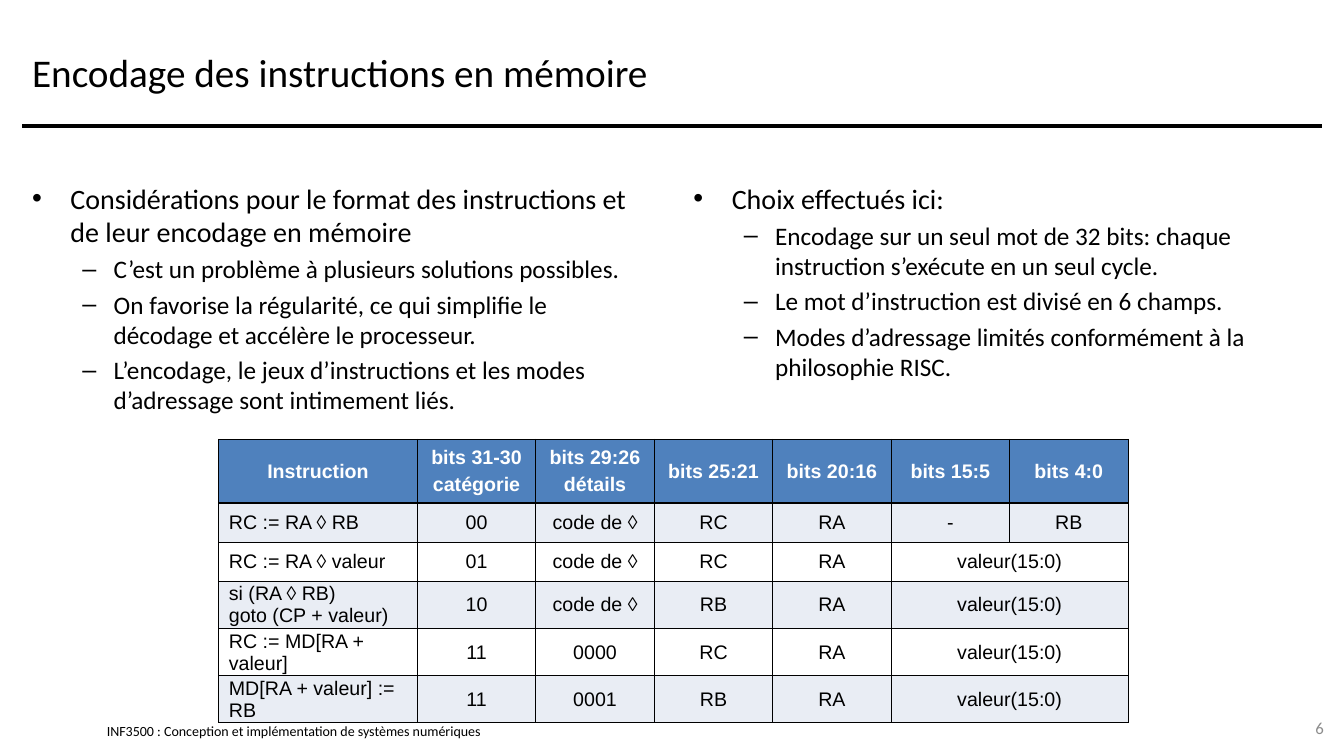
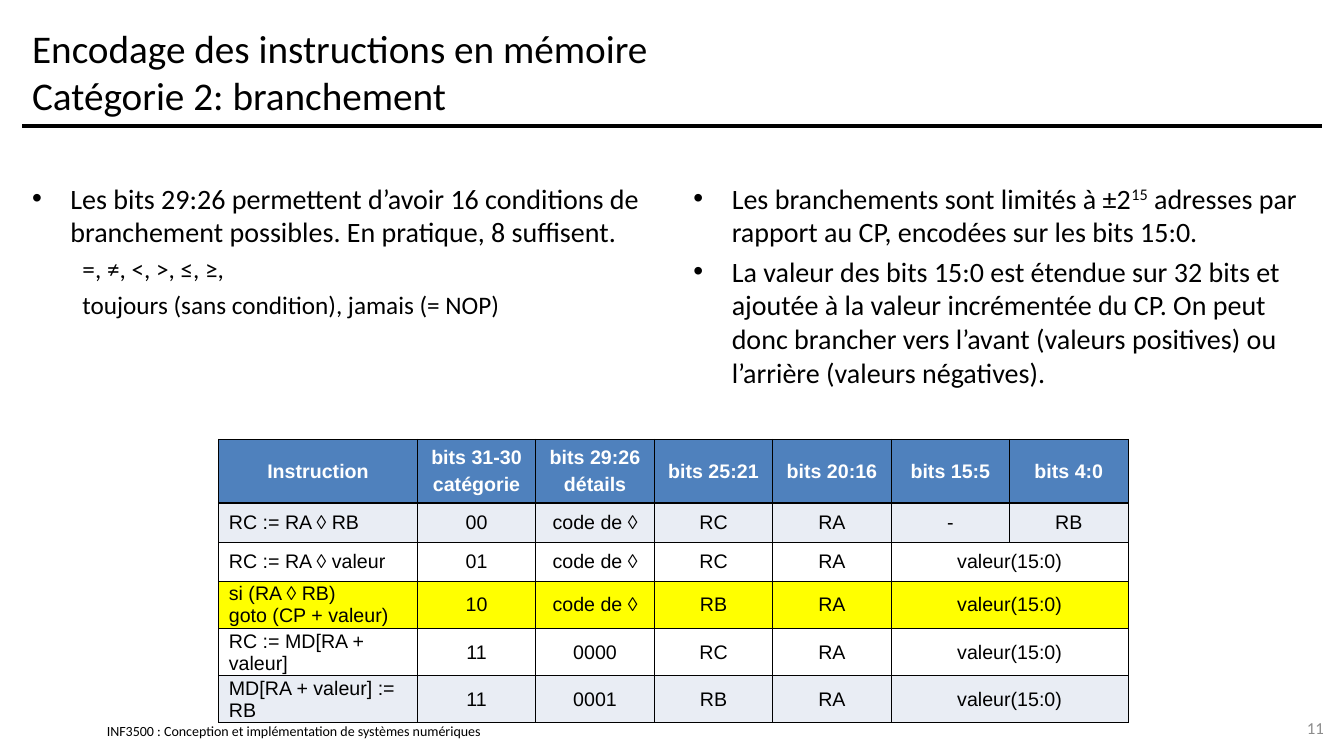
from copy import deepcopy

from lxml.etree import SubElement
from pptx import Presentation
from pptx.dml.color import RGBColor
from pptx.enum.shapes import MSO_CONNECTOR
from pptx.enum.text import MSO_ANCHOR as Anchor, PP_ALIGN as Align
from pptx.oxml.ns import qn
from pptx.util import Inches, Pt

BLACK = RGBColor(0x00, 0x00, 0x00)
WHITE = RGBColor(0xFF, 0xFF, 0xFF)
GREY = RGBColor(0x8C, 0x8C, 0x8C)
BLUE = RGBColor(0x4F, 0x81, 0xBD)
PALE = RGBColor(0xE9, 0xED, 0xF4)
YELLOW = RGBColor(0xFF, 0xFF, 0x00)

MARGIN, CONTENT_W = 0.22, 12.89
TITLE_BOX = (MARGIN, 0.17, CONTENT_W, 1.08)
RULE_Y = 1.25
COLUMN_BOXES = [(left, 1.75, 6.33, 5.08) for left in (MARGIN, 6.78)]
FOOTER_BOX = (1.06, 7.17, 5.11, 0.17)
NUMBER_BOX = (12.56, 7.02, 0.67, 0.4)
TABLE_BOX = (2.17, 4.36, 9.02, 2.64)
INSTRUCTION_W, HEADER_H, ROW_H = 1.97, 0.63, 0.39

FOOTER = "INF3500 : Conception et implémentation de systèmes numériques"
HEADER = ["Instruction", "bits 31-30|catégorie", "bits 29:26|détails",
          "bits 25:21", "bits 20:16", "bits 15:5", "bits 4:0"]
ENCODINGS = [
    ["RC := RA ◊ RB", "00", "code de ◊", "RC", "RA", "-", "RB"],
    ["RC := RA ◊ valeur", "01", "code de ◊", "RC", "RA", "valeur(15:0)"],
    ["si (RA ◊ RB)\ngoto (CP + valeur)", "10", "code de ◊", "RB", "RA", "valeur(15:0)"],
    ["RC := MD[RA + valeur]", "11", "0000", "RC", "RA", "valeur(15:0)"],
    ["MD[RA + valeur] := RB", "11", "0001", "RB", "RA", "valeur(15:0)"],
]

LEVELS = {
    "point": dict(size=20, left=0.38, hang=0.38, bullet="•"),
    "detail": dict(size=18, left=0.81, hang=0.31, bullet="–"),
    "plain": dict(size=18, left=0.5),
}

SLIDES = [
    dict(
        title="Encodage des instructions en mémoire",
        number="6",
        columns=[
            [("point", "Considérations pour le format des instructions et de leur encodage en mémoire"),
             ("detail", "C’est un problème à plusieurs solutions possibles."),
             ("detail", "On favorise la régularité, ce qui simplifie le décodage et accélère le processeur."),
             ("detail", "L’encodage, le jeux d’instructions et les modes d’adressage sont intimement liés.")],
            [("point", "Choix effectués ici:"),
             ("detail", "Encodage sur un seul mot de 32 bits: chaque instruction s’exécute en un seul cycle."),
             ("detail", "Le mot d’instruction est divisé en 6 champs."),
             ("detail", "Modes d’adressage limités conformément à la philosophie RISC.")],
        ],
    ),
    dict(
        title="Encodage des instructions en mémoire\nCatégorie 2: branchement",
        number="11",
        highlight=3,
        columns=[
            [("point", "Les bits 29:26 permettent d’avoir 16 conditions de branchement possibles. "
                       "En pratique, 8 suffisent."),
             ("plain", "=, ≠, <, >, ≤, ≥,"),
             ("plain", "toujours (sans condition), jamais (= NOP)")],
            [("point", "Les branchements sont limités à ±2^15^ adresses par rapport au CP, "
                       "encodées sur les bits 15:0."),
             ("point", "La valeur des bits 15:0 est étendue sur 32 bits et ajoutée à la valeur "
                       "incrémentée du CP. On peut donc brancher vers l’avant (valeurs positives) "
                       "ou l’arrière (valeurs négatives).")],
        ],
    ),
]


def write(frame, text, first=True, size=20, font="Calibri", color=BLACK, bold=False,
          align=Align.LEFT, before=0, after=0, left=0, hang=0, bullet=None):
    paragraph = frame.paragraphs[0] if first else frame.add_paragraph()
    properties = paragraph._p.get_or_add_pPr()
    properties.set("marL", str(Inches(left)))
    properties.set("indent", str(-Inches(hang)))
    if bullet:
        SubElement(properties, qn("a:buFont"), typeface="Arial")
        SubElement(properties, qn("a:buChar"), char=bullet)
    paragraph.alignment = align
    paragraph.space_before = Pt(0 if first else before)
    paragraph.space_after = Pt(after)
    for line_index, line in enumerate(text.split("\n")):
        if line_index:
            paragraph.add_line_break()
            paragraph._p[-1].append(deepcopy(run._r.get_or_add_rPr()))
        for part_index, part in enumerate(line.split("^")):
            run = paragraph.add_run()
            run.text = part
            run.font.size, run.font.name = Pt(size), font
            run.font.bold = bold
            run.font.color.rgb = color
            if part_index % 2:
                run._r.get_or_add_rPr().set("baseline", "30000")


def add_frame(slide, box, anchor=Anchor.MIDDLE, inset=None):
    frame = slide.shapes.add_textbox(*map(Inches, box)).text_frame
    frame.word_wrap = True
    frame.vertical_anchor = anchor
    if inset is not None:
        frame.margin_left = frame.margin_right = Inches(inset)
        frame.margin_top = frame.margin_bottom = Inches(inset)
    return frame


def add_furniture(slide, title, number):
    write(add_frame(slide, FOOTER_BOX, inset=0), FOOTER, size=10)
    rule = slide.shapes.add_connector(
        MSO_CONNECTOR.STRAIGHT,
        *map(Inches, (MARGIN, RULE_Y, MARGIN + CONTENT_W, RULE_Y)))
    rule.line.color.rgb = BLACK
    rule.line.width = Pt(3)
    SubElement(rule._element.spPr, qn("a:effectLst"))
    write(add_frame(slide, TITLE_BOX), title, size=28)
    write(add_frame(slide, NUMBER_BOX), number, size=12, color=GREY, align=Align.RIGHT)


def add_column(slide, box, points):
    frame = add_frame(slide, box, anchor=Anchor.TOP)
    for index, (level, text) in enumerate(points):
        style = LEVELS[level]
        write(frame, text, first=index == 0, before=style["size"] * 0.2, **style)


def style_cell(cell, fill):
    cell.margin_left = cell.margin_right = Inches(0.1)
    cell.margin_top = cell.margin_bottom = 0
    cell.vertical_anchor = Anchor.MIDDLE
    properties = cell._tc.get_or_add_tcPr()
    for side in ("lnL", "lnR", "lnT", "lnB"):
        border = SubElement(properties, qn(f"a:{side}"), w=str(Pt(1)))
        color = SubElement(border, qn("a:solidFill"))
        SubElement(color, qn("a:srgbClr"), val=str(BLACK))
    cell.fill.solid()
    cell.fill.fore_color.rgb = fill


def add_encoding_table(slide, box, highlight=None):
    rows = [HEADER, *ENCODINGS]
    count = len(HEADER)
    table = slide.shapes.add_table(len(rows), count, *map(Inches, box)).table
    field_w = (box[2] - INSTRUCTION_W) / (count - 1)
    for index, column in enumerate(table.columns):
        column.width = Inches(field_w if index else INSTRUCTION_W)
    for r, fields in enumerate(rows):
        table.rows[r].height = Inches(ROW_H if r else HEADER_H)
        fill = YELLOW if r == highlight else BLUE if r == 0 else PALE if r % 2 else WHITE
        for c in range(count):
            style_cell(table.cell(r, c), fill)
        if len(fields) < count:
            table.cell(r, len(fields) - 1).merge(table.cell(r, count - 1))
        for c, field in enumerate(fields):
            for index, text in enumerate(field.split("|")):
                write(table.cell(r, c).text_frame, text, first=index == 0,
                      size=14, font="Arial", bold=r == 0,
                      color=BLACK if r else WHITE, before=2, after=2,
                      align=Align.LEFT if r and c == 0 else Align.CENTER)


def add_encoding_slide(deck, title, number, columns, highlight=None):
    slide = deck.slides.add_slide(deck.slide_layouts[6])
    add_furniture(slide, title, number)
    for box, points in zip(COLUMN_BOXES, columns):
        add_column(slide, box, points)
    add_encoding_table(slide, TABLE_BOX, highlight)


def main():
    deck = Presentation()
    deck.slide_width, deck.slide_height = Inches(13.33), Inches(7.5)
    for content in SLIDES:
        add_encoding_slide(deck, **content)
    deck.save("out.pptx")


if __name__ == "__main__":
    main()
